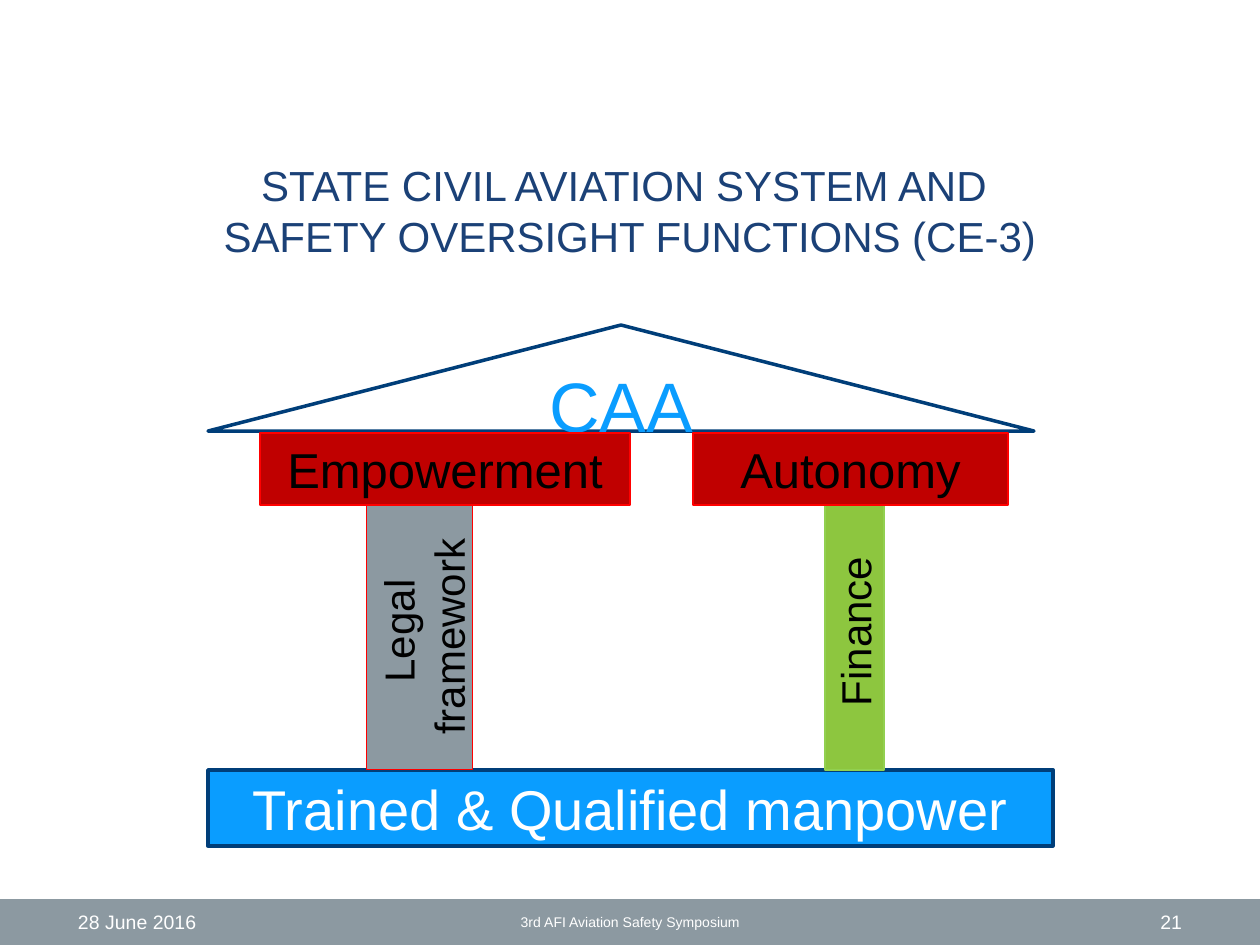
from pptx import Presentation
from pptx.dml.color import RGBColor
from pptx.enum.shapes import MSO_SHAPE
from pptx.enum.text import MSO_ANCHOR, PP_ALIGN
from pptx.util import Emu, Pt

PX = 914400 / 126
LEFT, CENTER, RIGHT = PP_ALIGN.LEFT, PP_ALIGN.CENTER, PP_ALIGN.RIGHT
TOP, MIDDLE = MSO_ANCHOR.TOP, MSO_ANCHOR.MIDDLE
RECT, ROOF = MSO_SHAPE.RECTANGLE, MSO_SHAPE.ISOSCELES_TRIANGLE

TITLE = "STATE CIVIL AVIATION SYSTEM AND \vSAFETY OVERSIGHT FUNCTIONS (CE-3)"
FOOTER_Y, FOOTER_H = 899, 46
FOOTERS = [
    ("28 June 2016", 63, 294, 11.1, LEFT),
    ("3rd AFI Aviation Safety Symposium", 431, 399, 8, CENTER),
    ("21", 903, 294, 11.1, RIGHT),
]
TEMPLE = [
    ("CAA", ROOF, (208, 325, 826, 106), 0, "FFFFFF", "003E79", 2, 40, "0A9DFF", MIDDLE),
    ("Trained & Qualified manpower", RECT, (208, 770, 845, 76), 0, "0A9DFF", "003E79", 2, 32, "FFFFFF", MIDDLE),
    ("Legal framework ", RECT, (281, 578, 277, 106), 270, "8C99A1", "FF0000", 0.75, 24, "000000", TOP),
    ("Empowerment", RECT, (260, 433, 370, 72), 0, "C00000", "FF0000", 0.75, 28, "000000", TOP),
    ("Finance", RECT, (716, 602, 277, 59), 270, "8DC63F", "92D050", 0.75, 24, "000000", MIDDLE),
    ("Autonomy", RECT, (693, 433, 315, 72), 0, "C00000", "FF0000", 0.75, 28, "000000", TOP),
]


def px(*values):
    return [Emu(round(v * PX)) for v in values]


def rgb(value):
    return RGBColor.from_string(value)


def write(sp, text, size, color, align=CENTER, anchor=MIDDLE, inset=(13, 6)):
    tf = sp.text_frame
    tf.word_wrap = True
    tf.vertical_anchor = anchor
    tf.margin_left, tf.margin_top = px(*inset)
    tf.margin_right, tf.margin_bottom = px(*inset)
    p = tf.paragraphs[0]
    p.text = text
    p.alignment = align
    p.font.name = "Arial"
    p.font.size = Pt(size)
    p.font.color.rgb = rgb(color)


def add_block(s, kind, box, fill, line=None, width=0):
    sp = s.shapes.add_shape(kind, *px(*box))
    sp.shadow.inherit = False
    sp.fill.solid()
    sp.fill.fore_color.rgb = rgb(fill)
    if line:
        sp.line.color.rgb = rgb(line)
        sp.line.width = Pt(width)
    else:
        sp.line.fill.background()
    return sp


def main():
    prs = Presentation()
    prs.slide_width, prs.slide_height = px(1260, 945)
    s = prs.slides.add_slide(prs.slide_layouts[6])

    add_block(s, RECT, (0, FOOTER_Y, 1260, FOOTER_H), "8C99A1")
    title = s.shapes.add_textbox(*px(0, 154, 1260, 141))
    write(title, TITLE, 24, "1B4177", anchor=TOP)

    for text, kind, box, rotation, fill, line, width, size, color, anchor in TEMPLE:
        sp = add_block(s, kind, box, fill, line, width)
        sp.rotation = rotation
        write(sp, text, size, color, anchor=anchor)

    for text, x, w, size, align in FOOTERS:
        sp = s.shapes.add_textbox(*px(x, FOOTER_Y, w, FOOTER_H))
        write(sp, text, size, "FFFFFF", align, inset=(15, 8))

    prs.save("out.pptx")


if __name__ == "__main__":
    main()
